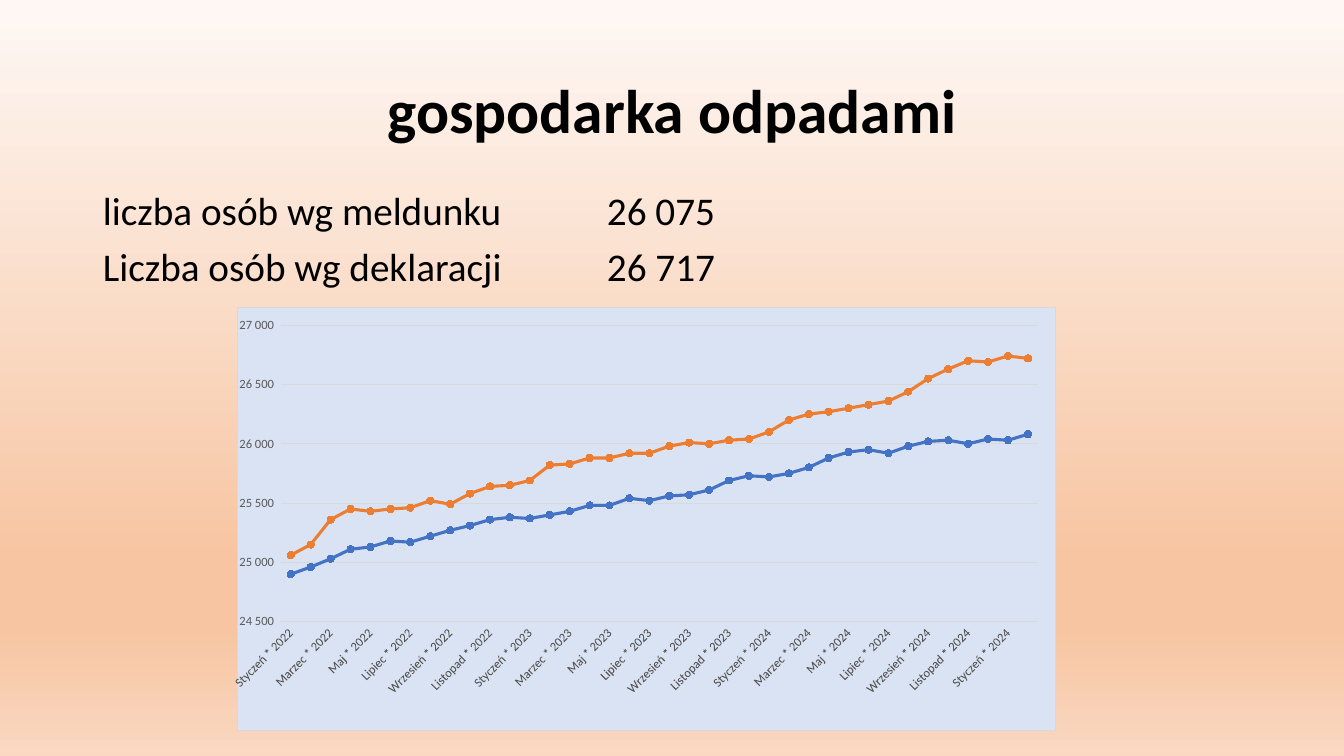
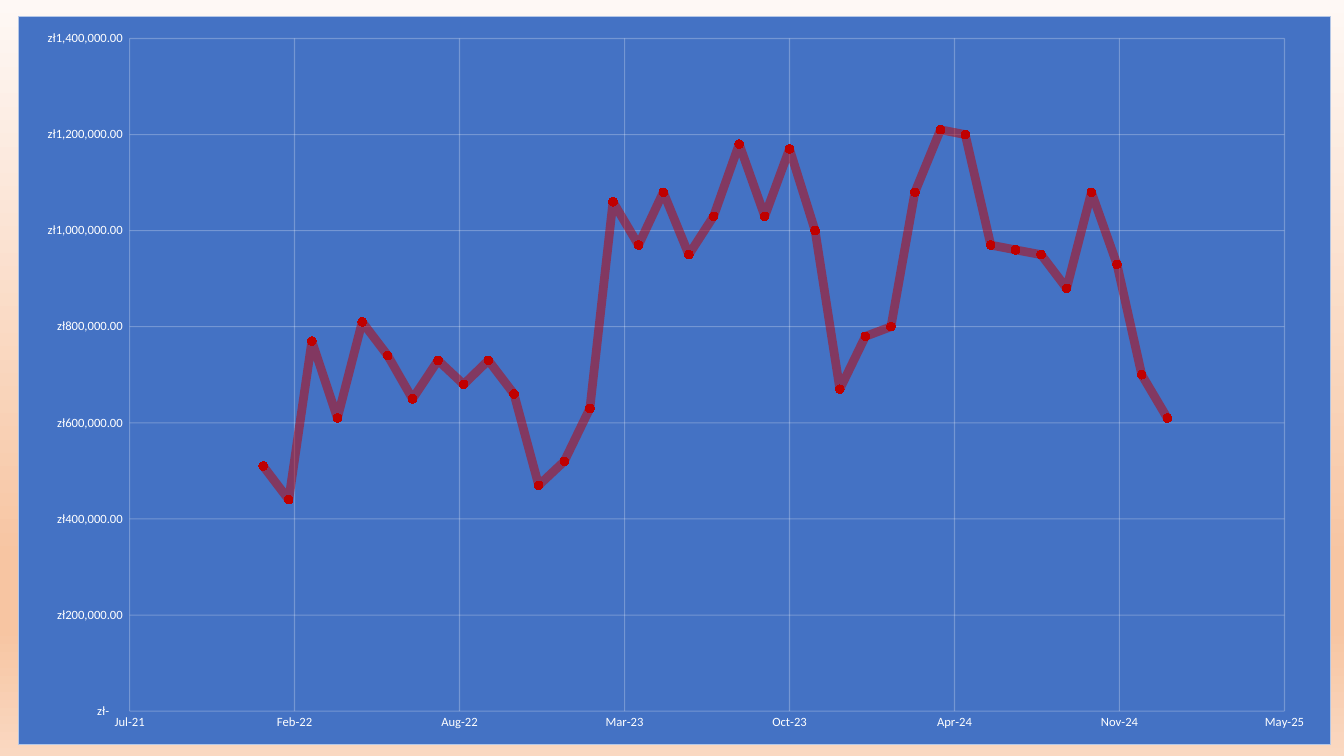
from dataclasses import dataclass
from itertools import accumulate

from pptx import Presentation
from pptx.chart.data import CategoryChartData, XyChartData
from pptx.dml.color import RGBColor
from pptx.enum.chart import XL_CHART_TYPE, XL_MARKER_STYLE, XL_TICK_MARK
from pptx.enum.text import MSO_ANCHOR, PP_ALIGN
from pptx.oxml import parse_xml
from pptx.oxml.ns import nsdecls, qn
from pptx.util import Inches, Pt


@dataclass(frozen=True)
class Theme:
    font: str = "Calibri"
    text: str = "000000"
    axis_text: str = "595959"
    rule: str = "D9D9D9"
    blue: str = "4472C4"
    orange: str = "ED7D31"
    red: str = "C00000"
    white: str = "FFFFFF"
    pale_blue: str = "DAE3F3"
    soft_blue: str = "B4C7E7"
    title_size: int = 44
    body_size: int = 28
    chart_size: int = 10
    axis_size: int = 9
    background: tuple = ((0, "FEF8F5"), (74, "F7C5A2"), (83, "F7C5A2"), (100, "FAD8C1"))


T = Theme()

TITLE_BOX = (0.92, 0.4, 11.5, 1.45)
BODY_BOX = (0.92, 1.85, 11.5, 4.76)
RESIDENTS_BOX = (2.3, 3.05, 8.17, 4.2)
COSTS_BOX = (0.18, 0.16, 13.02, 7.23)

MONTHS = ("Styczeń", "Luty", "Marzec", "Kwiecień", "Maj", "Czerwiec", "Lipiec",
          "Sierpień", "Wrzesień", "Październik", "Listopad", "Grudzień")
MONTH_LABELS = [f"{month} * {year}" for year in (2022, 2023, 2024) for month in MONTHS]
MONTH_LABELS[-1] = "Grudzień *2024"
MONTH_LABELS += [f"{month} * 2024" for month in MONTHS[:2]]

REGISTERED = (
    24900, 24960, 25030, 25110, 25130, 25180, 25170, 25220, 25270, 25310, 25360, 25380,
    25370, 25400, 25430, 25480, 25480, 25540, 25520, 25560, 25570, 25610, 25690, 25730,
    25720, 25750, 25800, 25880, 25930, 25950, 25920, 25980, 26020, 26030, 26000, 26040,
    26030, 26080)
DECLARED = (
    25060, 25150, 25360, 25450, 25430, 25450, 25460, 25520, 25490, 25580, 25640, 25650,
    25690, 25820, 25830, 25880, 25880, 25920, 25920, 25980, 26010, 26000, 26030, 26040,
    26100, 26200, 26250, 26270, 26300, 26330, 26360, 26440, 26550, 26630, 26700, 26690,
    26740, 26720)

COSTS_THOUSANDS = (
    510, 440, 770, 610, 810, 740, 650, 730, 680, 730, 660, 470,
    520, 630, 1060, 970, 1080, 950, 1030, 1180, 1030, 1170, 1000, 670,
    780, 800, 1080, 1210, 1200, 970, 960, 950, 880, 1080, 930, 700,
    610)
JANUARY_2022 = 44562  # spreadsheet day number
YEAR_DAYS = (31, 28, 31, 30, 31, 30, 31, 31, 30, 31, 30, 31)
LEAP_YEAR_DAYS = (31, 29) + YEAR_DAYS[2:]
MONTH_STARTS = list(accumulate(YEAR_DAYS * 2 + LEAP_YEAR_DAYS, initial=JANUARY_2022))

COUNT_FORMAT = r'_-* #\ ##0_-;\-* #\ ##0_-;_-* "-"??_-;_-'
MONEY_FORMAT = '_-"zł"* #,##0.00_-;-"zł"* #,##0.00_-;_-"zł"* "-"??_-;_-@_-'


def inches(box):
    return [Inches(v) for v in box]


def set_font(font, size, color, bold=None):
    font.name, font.size, font.bold = T.font, Pt(size), bold
    font.color.rgb = RGBColor.from_string(color)


def set_line(line, color, width, opacity=100):
    line.width = Pt(width)
    line.fill.solid()
    line.fill.fore_color.rgb = RGBColor.from_string(color)
    if opacity < 100:
        alpha = parse_xml(f'<a:alpha {nsdecls("a")} val="{opacity * 1000}"/>')
        line._ln.find(".//" + qn("a:srgbClr")).append(alpha)


def set_background(master):
    fill = master.background.fill
    fill.gradient()
    fill.gradient_angle = 270
    stops = master.element.find(".//" + qn("a:gsLst"))
    for stop in list(stops):
        stops.remove(stop)
    for position, color in T.background:
        stops.append(parse_xml(
            f'<a:gs {nsdecls("a")} pos="{position * 1000}"><a:srgbClr val="{color}"/></a:gs>'))


def area_properties(fill, border=None):
    """Return the c:spPr of a chart area, with an optional thin border."""
    solid = '<a:solidFill><a:srgbClr val="{}"/></a:solidFill>'
    ln = f'<a:ln w="{Pt(0.75)}">{solid.format(border)}</a:ln>' if border else ""
    return parse_xml(f'<c:spPr {nsdecls("c", "a")}>{solid.format(fill)}{ln}</c:spPr>')


def set_plot_area(chart, fill, box):
    """Fix the inner plot area; box holds fractions of the chart."""
    area = chart.element.find(".//" + qn("c:plotArea"))
    for old in area.findall(qn("c:layout")):
        area.remove(old)
    places = "".join(f'<c:{k} val="{v}"/>' for k, v in zip("xywh", box))
    area.insert(0, parse_xml(
        f'<c:layout {nsdecls("c")}><c:manualLayout><c:layoutTarget val="inner"/>'
        f'<c:xMode val="edge"/><c:yMode val="edge"/>{places}</c:manualLayout></c:layout>'))
    area.append(area_properties(fill))


def add_plain_chart(slide, kind, data, box, fill, border):
    chart = slide.shapes.add_chart(kind, *inches(box), data).chart
    chart.has_title = chart.has_legend = False
    set_font(chart.font, T.chart_size, T.text)
    chart.element.find(qn("c:txPr")).addprevious(area_properties(fill, border))
    chart.plots[0].vary_by_categories = False
    return chart


def style_axis(axis, color, grid=None, scale=None, number_format=None):
    """grid is (colour, opacity); scale is (minimum, maximum, step)."""
    axis.major_tick_mark = axis.minor_tick_mark = XL_TICK_MARK.NONE
    set_font(axis.tick_labels.font, T.axis_size, color)
    axis.format.line.fill.background()
    axis.has_major_gridlines = grid is not None
    if grid:
        grid_color, opacity = grid
        set_line(axis.major_gridlines.format.line, grid_color, 0.75, opacity)
    if scale:
        axis.minimum_scale, axis.maximum_scale, axis.major_unit = scale
    if number_format:
        axis.tick_labels.number_format = number_format
        axis.tick_labels.number_format_is_linked = False


def style_series(series, color, width, marker_size, opacity=100):
    set_line(series.format.line, color, width, opacity)
    marker = series.marker
    marker.style, marker.size = XL_MARKER_STYLE.CIRCLE, marker_size
    marker.format.fill.solid()
    marker.format.fill.fore_color.rgb = RGBColor.from_string(color)
    set_line(marker.format.line, color, 0.75)


def fill_title(title, text, box):
    title.left, title.top, title.width, title.height = inches(box)
    tf = title.text_frame
    tf.text = text
    tf.vertical_anchor = MSO_ANCHOR.MIDDLE
    p = tf.paragraphs[0]
    p.alignment, p.line_spacing = PP_ALIGN.CENTER, 0.9
    set_font(p.font, T.title_size, T.text, bold=True)


def fill_body(body, lines, box):
    body.left, body.top, body.width, body.height = inches(box)
    tf = body.text_frame
    tf.text = "\n".join(lines)
    for p in tf.paragraphs:
        p.line_spacing, p.space_before = 0.9, Pt(10)
        set_font(p.font, T.body_size, T.text)
        pPr = p._p.get_or_add_pPr()
        for name, value in (("marL", 0), ("indent", 0), ("defTabSz", Inches(1))):
            pPr.set(name, str(value))
        pPr.find(qn("a:defRPr")).addprevious(parse_xml(f'<a:buNone {nsdecls("a")}/>'))


def add_residents_chart(slide, box):
    data = CategoryChartData()
    data.categories = MONTH_LABELS
    data.add_series("Series 1", REGISTERED)
    data.add_series("Series 2", DECLARED)
    chart = add_plain_chart(slide, XL_CHART_TYPE.LINE_MARKERS, data, box,
                            T.pale_blue, T.rule)
    set_plot_area(chart, T.pale_blue, (0.053, 0.041, 0.926, 0.702))
    months = chart.category_axis
    style_axis(months, T.axis_text)
    set_line(months.format.line, T.rule, 0.75)
    label_body = months._element.find(f'{qn("c:txPr")}/{qn("a:bodyPr")}')
    label_body.set("rot", str(-45 * 60000))
    style_axis(chart.value_axis, T.axis_text, (T.rule, 100),
               (24500, 27000, 500), COUNT_FORMAT)
    for series, color in zip(chart.series, (T.blue, T.orange)):
        style_series(series, color, 2.25, 5)
        series.smooth = False


def add_costs_chart(slide, box):
    data = XyChartData()
    costs = data.add_series("Series 1")
    for day, thousands in zip(MONTH_STARTS, COSTS_THOUSANDS):
        costs.add_data_point(day, thousands * 1000)
    chart = add_plain_chart(slide, XL_CHART_TYPE.XY_SCATTER_LINES, data, box,
                            T.blue, T.soft_blue)
    grid = (T.white, 25)
    style_axis(chart.category_axis, T.white, grid, (44400, 45800, 200), "mmm-yy")
    style_axis(chart.value_axis, T.white, grid, (0, 1400000, 200000), MONEY_FORMAT)
    style_series(chart.series[0], T.red, 6.25, 6, opacity=50)


def add_residents_slide(prs):
    slide = prs.slides.add_slide(prs.slide_layouts[1])
    fill_title(slide.shapes.title, "gospodarka odpadami", TITLE_BOX)
    fill_body(slide.placeholders[1],
              ("liczba osób wg meldunku\t\t26 075", "Liczba osób wg deklaracji\t\t26 717"),
              BODY_BOX)
    add_residents_chart(slide, RESIDENTS_BOX)


def add_costs_slide(prs):
    slide = prs.slides.add_slide(prs.slide_layouts[6])
    add_costs_chart(slide, COSTS_BOX)


def main():
    prs = Presentation()
    prs.slide_width, prs.slide_height = Inches(13.33), Inches(7.5)
    set_background(prs.slide_master)
    add_residents_slide(prs)
    add_costs_slide(prs)
    prs.save("out.pptx")


if __name__ == "__main__":
    main()
